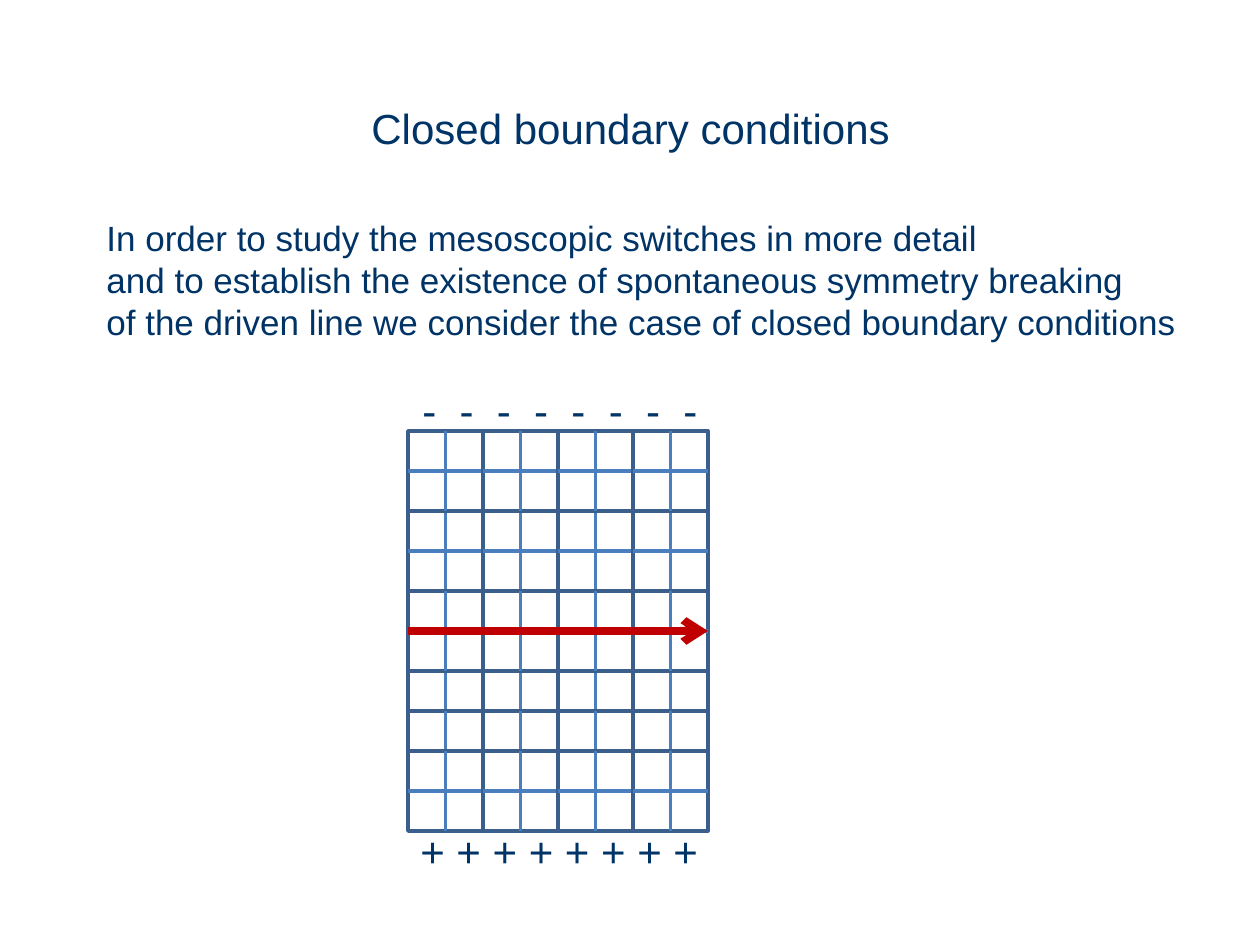
from dataclasses import dataclass

from lxml import etree
from pptx import Presentation
from pptx.dml.color import RGBColor
from pptx.enum.shapes import MSO_CONNECTOR, MSO_SHAPE
from pptx.enum.text import MSO_AUTO_SIZE
from pptx.oxml.ns import qn
from pptx.util import Emu, Pt

STRAIGHT = MSO_CONNECTOR.STRAIGHT
RECTANGLE = MSO_SHAPE.RECTANGLE
FIT_SHAPE = MSO_AUTO_SIZE.SHAPE_TO_FIT_TEXT
TOP, LEFT, BOTTOM, RIGHT = range(4)

PX_PER_INCH = 126
GRID_LEFT, GRID_TOP = 408, 431
CELL_WIDTH, HALF_CELL = 75, 40
COLUMNS = 4
# Row tops in half cells, from back to front; some rows overlap by half.
ROW_STEPS = (5, 2, 4, 7, 0)
FRONT_ROW_STEP = 8
DRIVEN_ROW_STEP = 4
SITES = 2 * COLUMNS


@dataclass(frozen=True)
class Theme:
    font: str = "Arial"
    text: RGBColor = RGBColor(0x00, 0x33, 0x66)
    cell_line: RGBColor = RGBColor(0x3A, 0x5F, 0x8C)
    middle_line: RGBColor = RGBColor(0x4B, 0x7E, 0xBC)
    arrow: RGBColor = RGBColor(0xC0, 0x00, 0x00)
    large_size: int = 24
    body_size: int = 20


THEME = Theme()


def px(length):
    return Emu(round(length * 914400 / PX_PER_INCH))


def add_text(shapes, box, text, size):
    text_box = shapes.add_textbox(*map(px, box))
    text_frame = text_box.text_frame
    text_frame.word_wrap = False
    text_frame.auto_size = FIT_SHAPE
    text_frame.text = text
    for paragraph in text_frame.paragraphs:
        for run in paragraph.runs:
            run.font.name = THEME.font
            run.font.size = Pt(size)
            run.font.color.rgb = THEME.text


def add_cell(shapes, left, top):
    cell = shapes.add_shape(
        RECTANGLE, px(left), px(top), px(CELL_WIDTH), px(2 * HALF_CELL)
    )
    cell.shadow.inherit = False
    cell.fill.background()
    cell.line.color.rgb = THEME.cell_line
    cell.line.width = Pt(2)
    return cell


def join_sides(shapes, start, start_side, end, end_side, color, width):
    """Draw a line between the side middles of two rectangles."""
    connector = shapes.add_connector(
        STRAIGHT, start.left, start.top, end.left, end.top
    )
    connector.begin_connect(start, start_side)
    connector.end_connect(end, end_side)
    connector.line.color.rgb = color
    connector.line.width = Pt(width)
    etree.SubElement(connector._element.spPr, qn("a:effectLst"))
    return connector


def add_row(shapes, step):
    """Add a row of cells, each halved both ways, and return the cells."""
    cells = []
    for column in range(COLUMNS):
        left = GRID_LEFT + column * CELL_WIDTH
        cell = add_cell(shapes, left, GRID_TOP + step * HALF_CELL)
        join_sides(shapes, cell, LEFT, cell, RIGHT, THEME.middle_line, 2.25)
        join_sides(shapes, cell, TOP, cell, BOTTOM, THEME.middle_line, 1.5)
        cells.append(cell)
    return cells


def add_driven_line(shapes, row):
    arrow = join_sides(shapes, row[0], LEFT, row[-1], RIGHT, THEME.arrow, 4.5)
    line = arrow.line._get_or_add_ln()
    etree.SubElement(line, qn("a:tailEnd"), type="arrow")


def add_lattice(slide):
    shapes = slide.shapes.add_group_shape().shapes
    rows = {step: add_row(shapes, step) for step in ROW_STEPS}
    add_driven_line(shapes, rows[DRIVEN_ROW_STEP])
    add_row(shapes, FRONT_ROW_STEP)
    add_text(shapes, (408, 819, 305, 63), " ".join("+" * SITES),
             THEME.large_size)
    add_text(shapes, (410, 378, 302, 63), "  ".join("-" * SITES),
             THEME.large_size)


def main():
    presentation = Presentation()
    presentation.slide_width = px(1260)
    presentation.slide_height = px(945)
    slide = presentation.slides.add_slide(presentation.slide_layouts[6])
    add_text(slide.shapes, (359, 96, 549, 63), "Closed boundary conditions",
             THEME.large_size)
    add_text(
        slide.shapes,
        (94, 210, 1104, 140),
        "In order to study the mesoscopic switches in more detail\n"
        "and to establish the existence of spontaneous symmetry breaking\n"
        "of the driven line we consider the case of closed boundary conditions",
        THEME.body_size,
    )
    add_lattice(slide)
    presentation.save("out.pptx")


if __name__ == "__main__":
    main()
